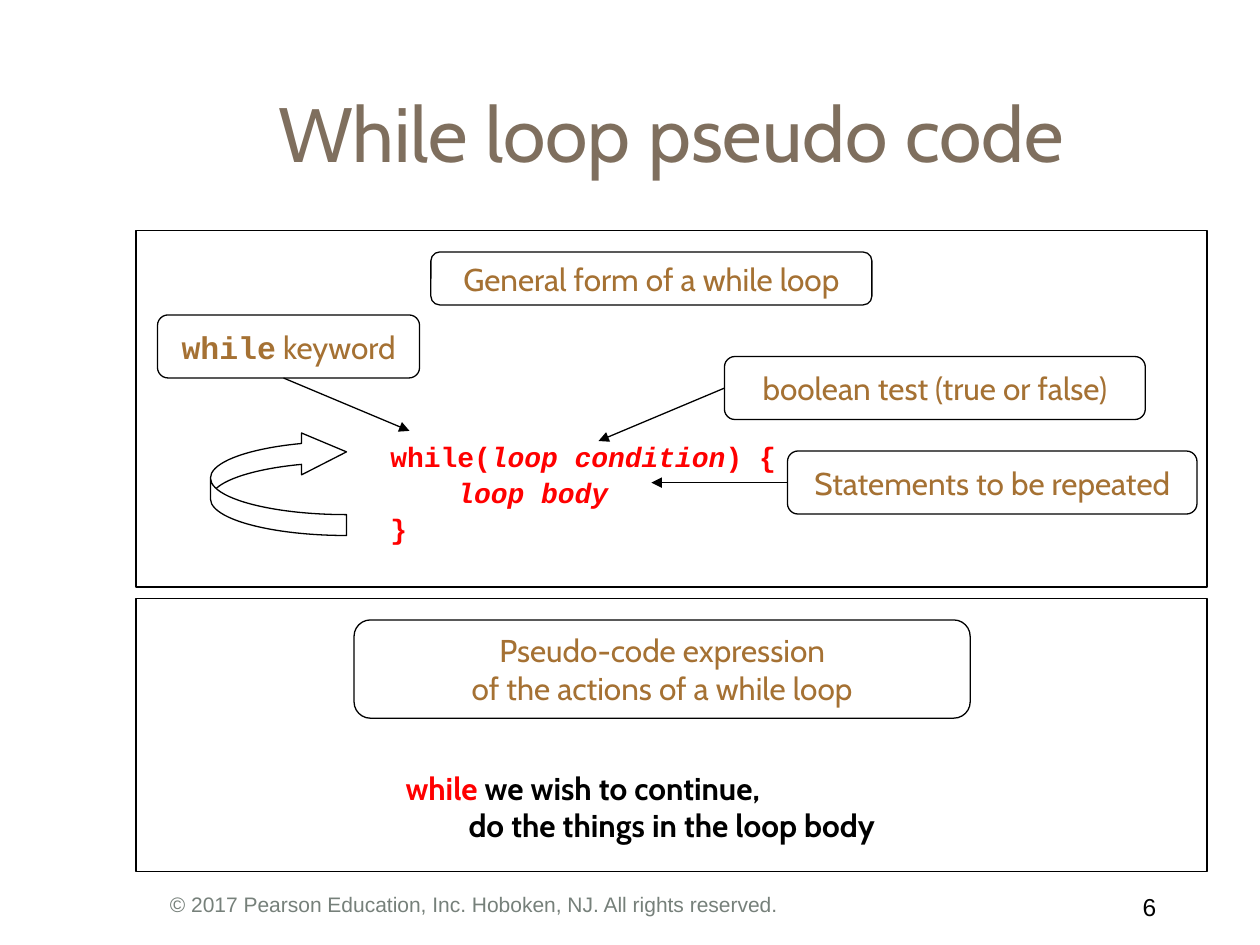
from lxml import etree
from pptx import Presentation
from pptx.dml.color import RGBColor
from pptx.enum.shapes import MSO_CONNECTOR as Connector, MSO_SHAPE as Shape
from pptx.enum.text import MSO_ANCHOR as Anchor, PP_ALIGN as Align
from pptx.oxml.ns import qn
from pptx.util import Inches, Pt

BLACK = RGBColor(0x00, 0x00, 0x00)
RED = RGBColor(0xFF, 0x00, 0x00)
BROWN = RGBColor(0xA5, 0x71, 0x33)
TAUPE = RGBColor(0x7F, 0x6F, 0x5E)
GREY = RGBColor(0x76, 0x80, 0x7A)
BODY, CODE, PLAIN = "Cabin", "Courier New", "Arial"
LINE_WIDTH = Pt(0.75)
TOP, LEFT = 0, 1  # connection sites


def write(frame, lines, *, size, font=BODY, color=BLACK, bold=False,
          align=Align.LEFT, anchor=Anchor.TOP, spacing=None):
    """Each line is a list of (text, format overrides) pairs."""
    frame.word_wrap = True
    frame.vertical_anchor = anchor
    for number, line in enumerate(lines):
        para = frame.add_paragraph() if number else frame.paragraphs[0]
        para.alignment = align
        if spacing:
            para.line_spacing = spacing
        for text, own in line:
            span = para.add_run()
            span.text = text
            span.font.size = Pt(size)
            span.font.name = own.get("font", font)
            span.font.bold = own.get("bold", bold)
            span.font.italic = own.get("italic", False)
            span.font.color.rgb = own.get("color", color)


def add_text(page, bounds, lines, **style):
    box = page.shapes.add_textbox(*map(Inches, bounds))
    write(box.text_frame, lines, **style)
    return box


def add_outline(page, kind, bounds):
    shape = page.shapes.add_shape(kind, *map(Inches, bounds))
    shape.shadow.inherit = False
    shape.fill.background()
    shape.line.color.rgb = BLACK
    shape.line.width = LINE_WIDTH
    return shape


def add_label(page, bounds, lines):
    label = add_outline(page, Shape.ROUNDED_RECTANGLE, bounds)
    write(label.text_frame, lines, size=18, color=BROWN,
          align=Align.CENTER, anchor=Anchor.MIDDLE)
    return label


def add_arrow(page, start, end, source=None):
    arrow = page.shapes.add_connector(
        Connector.STRAIGHT, *map(Inches, start + end))
    if source is not None:
        arrow.begin_connect(source, LEFT)
    arrow.line.color.rgb = BLACK
    arrow.line.width = LINE_WIDTH
    etree.SubElement(arrow.line._get_or_add_ln(), qn("a:tailEnd"), type="triangle")
    etree.SubElement(arrow._element.spPr, qn("a:effectLst"))


def main():
    deck = Presentation()
    deck.slide_width, deck.slide_height = Inches(10), Inches(7.5)
    page = deck.slides.add_slide(deck.slide_layouts[6])

    # Title and footer
    add_text(page, (1.08, 0.42, 8.5, 1.25), [[("While loop pseudo code", {})]],
             size=44, color=TAUPE, align=Align.CENTER, anchor=Anchor.MIDDLE)
    add_text(page, (1.25, 7.03, 7.58, 0.33),
             [[("© 2017 Pearson Education, Inc. Hoboken, NJ. All rights reserved.", {})]],
             size=12, font=PLAIN, color=GREY)
    add_text(page, (8.75, 7.03, 0.58, 0.33), [[("6 ", {})]],
             size=14, font=PLAIN, align=Align.RIGHT)

    # Panels
    for top, height in ((1.83, 2.83), (4.75, 2.17)):
        add_outline(page, Shape.RECTANGLE, (1.08, top, 8.5, height))

    # General form: code with its callouts
    italic = {"italic": True}
    add_text(page, (3, 3.42, 3.5, 0.9),
             [[("while(", {}), ("loop condition", italic), (") {", {})],
              [("    ", {}), ("loop body", italic)],
              [("}", {})]],
             size=16, font=CODE, color=RED, bold=True, spacing=1.07)
    add_label(page, (3.42, 2, 3.5, 0.42), [[("General form of a while loop", {})]])
    add_label(page, (1.25, 2.5, 2.08, 0.5),
              [[("while", {"font": CODE, "bold": True}), (" keyword", {})]])
    test = add_label(page, (5.75, 2.83, 3.34, 0.5),
                     [[("boolean test (true or false)", {})]])
    statements = add_label(page, (6.25, 3.58, 3.25, 0.5),
                           [[("Statements to be repeated", {})]])
    add_arrow(page, (2.25, 3), (3.25, 3.42))
    add_arrow(page, (5.75, 3.08), (4.75, 3.5), test)
    add_arrow(page, (6.25, 3.83), (5.17, 3.83), statements)

    # Arrow looping back to the condition
    loop = add_outline(page, Shape.CURVED_LEFT_ARROW, (1.67, 3.42, 1.08, 0.83))
    loop.rotation = 180
    for index, value in enumerate((0.2, 0.4, 0.43)):
        loop.adjustments[index] = value

    # Pseudo-code in words
    add_label(page, (2.81, 4.92, 4.89, 0.78),
              [[("Pseudo-code expression", {})],
               [("of the actions of a while loop", {})]])
    words = add_text(page, (3.12, 6.05, 4.42, 0.71),
                     [[("while", {"color": RED}), (" we wish to continue,", {})],
                      [("do the things in the loop body", {})]],
                     size=18, bold=True)
    action = words.text_frame.paragraphs[1]
    action._p.get_or_add_pPr().set("marL", str(Inches(0.5)))

    deck.save("out.pptx")


if __name__ == "__main__":
    main()
